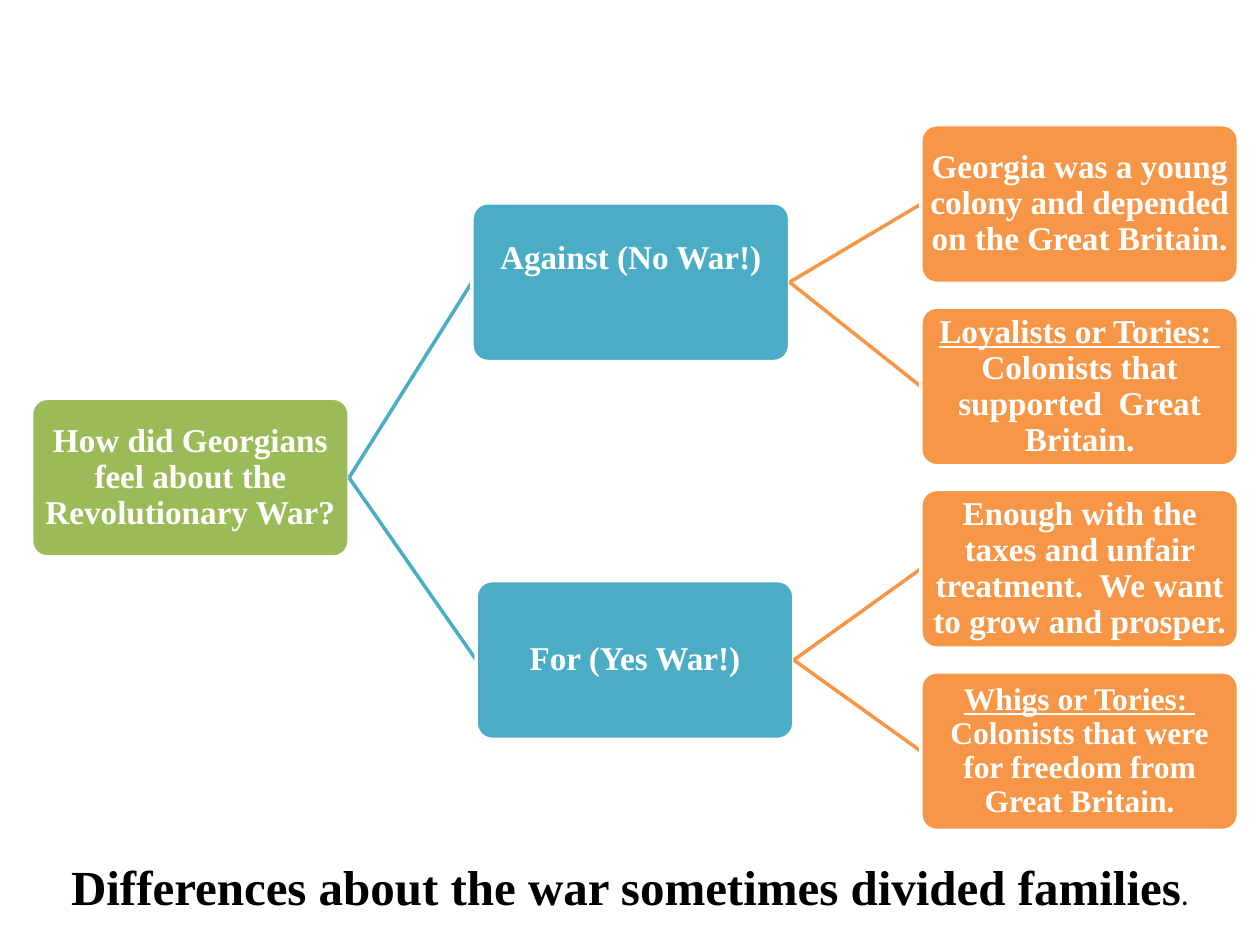
from lxml.etree import SubElement
from pptx import Presentation
from pptx.dml.color import RGBColor
from pptx.enum.shapes import MSO_CONNECTOR, MSO_SHAPE
from pptx.enum.text import MSO_ANCHOR, PP_ALIGN
from pptx.oxml.ns import qn
from pptx.util import Pt

COLORS = {"question": "9BBB59", "side": "4BACC6", "reason": "F79646", "white": "FFFFFF", "black": "000000"}
LEVELS = ["question", "side", "reason"]
SERIF = "Times New Roman"

TREE = {
    "text": "How did Georgians feel about the Revolutionary War?",
    "children": [
        {
            "text": "Against (No War!)",
            "nudge": (-2.4, -7.5),
            "lift": 27,
            "children": [
                {"text": "Georgia was a young colony and depended on the Great Britain."},
                {"heading": "Loyalists or Tories:  ", "text": "Colonists that supported  Great Britain."},
            ],
        },
        {
            "text": "For (Yes War!)",
            "children": [
                {"text": "Enough with the taxes and unfair treatment.  We want to grow and prosper."},
                {"heading": "Whigs or Tories:  ", "text": "Colonists that were for freedom from Great Britain.", "size": 18},
            ],
        },
    ],
}
CAPTION = [("Differences about the war sometimes divided families", 28, SERIF, True), (".", 18, "Calibri", False)]

BOX_WIDTH, BOX_HEIGHT = 181.5, 90.7
LEFT, TOP = 18, 71.3
COLUMN_STEP, ROW_STEP = 254.1, 104.2
INSET = 0.72


def color(name):
    return RGBColor.from_string(COLORS[name])


def add_run(paragraph, text, size, font_name, font_color, bold=True, underline=False):
    run = paragraph.add_run()
    run.text = text
    run.font.size = Pt(size)
    run.font.name = font_name
    run.font.bold = bold
    run.font.underline = underline
    run.font.color.rgb = color(font_color)


def place(node, level=0, first_row=0):
    """Set each node's level and row, centring parents on their children, and return the next free row."""
    next_row = first_row
    for child in node.get("children", []):
        next_row = place(child, level + 1, next_row)
    next_row = max(next_row, first_row + 1)
    node["level"] = level
    node["row"] = (first_row + next_row - 1) / 2
    return next_row


def add_box(slide, node):
    shift_x, shift_y = node.get("nudge", (0, 0))
    shape = slide.shapes.add_shape(
        MSO_SHAPE.ROUNDED_RECTANGLE,
        Pt(LEFT + node["level"] * COLUMN_STEP + shift_x),
        Pt(TOP + node["row"] * ROW_STEP + shift_y),
        Pt(BOX_WIDTH),
        Pt(BOX_HEIGHT),
    )
    shape.adjustments[0] = 0.1
    shape.shadow.inherit = False
    shape.fill.solid()
    shape.fill.fore_color.rgb = color(LEVELS[node["level"]])
    shape.line.color.rgb = color("white")
    shape.line.width = Pt(2)
    frame = shape.text_frame
    frame.word_wrap = True
    frame.vertical_anchor = MSO_ANCHOR.MIDDLE
    frame.margin_left = frame.margin_right = frame.margin_top = Pt(INSET)
    frame.margin_bottom = Pt(INSET + node.get("lift", 0))
    paragraph = frame.paragraphs[0]
    paragraph.alignment = PP_ALIGN.CENTER
    paragraph.line_spacing = 0.9
    size = node.get("size", 19)
    if "heading" in node:
        add_run(paragraph, node["heading"], size, SERIF, "white", underline=True)
    add_run(paragraph, node["text"], size, SERIF, "white")
    return shape


def add_branch(slide, parent, child, level):
    middle = Pt(BOX_HEIGHT / 2)
    connector = slide.shapes.add_connector(
        MSO_CONNECTOR.STRAIGHT,
        parent.left + parent.width,
        parent.top + middle,
        child.left,
        child.top + middle,
    )
    connector.begin_connect(parent, 3)
    connector.end_connect(child, 1)
    connector.line.color.rgb = color(LEVELS[level])
    connector.line.width = Pt(2)
    SubElement(connector.element.spPr, qn("a:effectLst"))
    child.element.addprevious(connector.element)


def add_tree(slide, node, parent=None):
    box = add_box(slide, node)
    if parent is not None:
        add_branch(slide, parent, box, node["level"])
    for child in node.get("children", []):
        add_tree(slide, child, box)


def add_caption(slide):
    frame = slide.shapes.add_textbox(Pt(0), Pt(486), Pt(720), Pt(41)).text_frame
    frame.word_wrap = True
    paragraph = frame.paragraphs[0]
    paragraph.alignment = PP_ALIGN.CENTER
    for text, size, font_name, bold in CAPTION:
        add_run(paragraph, text, size, font_name, "black", bold)


def main():
    presentation = Presentation()
    presentation.slide_width, presentation.slide_height = Pt(720), Pt(540)
    slide = presentation.slides.add_slide(presentation.slide_layouts[6])
    place(TREE)
    add_tree(slide, TREE)
    add_caption(slide)
    presentation.save("out.pptx")


if __name__ == "__main__":
    main()
